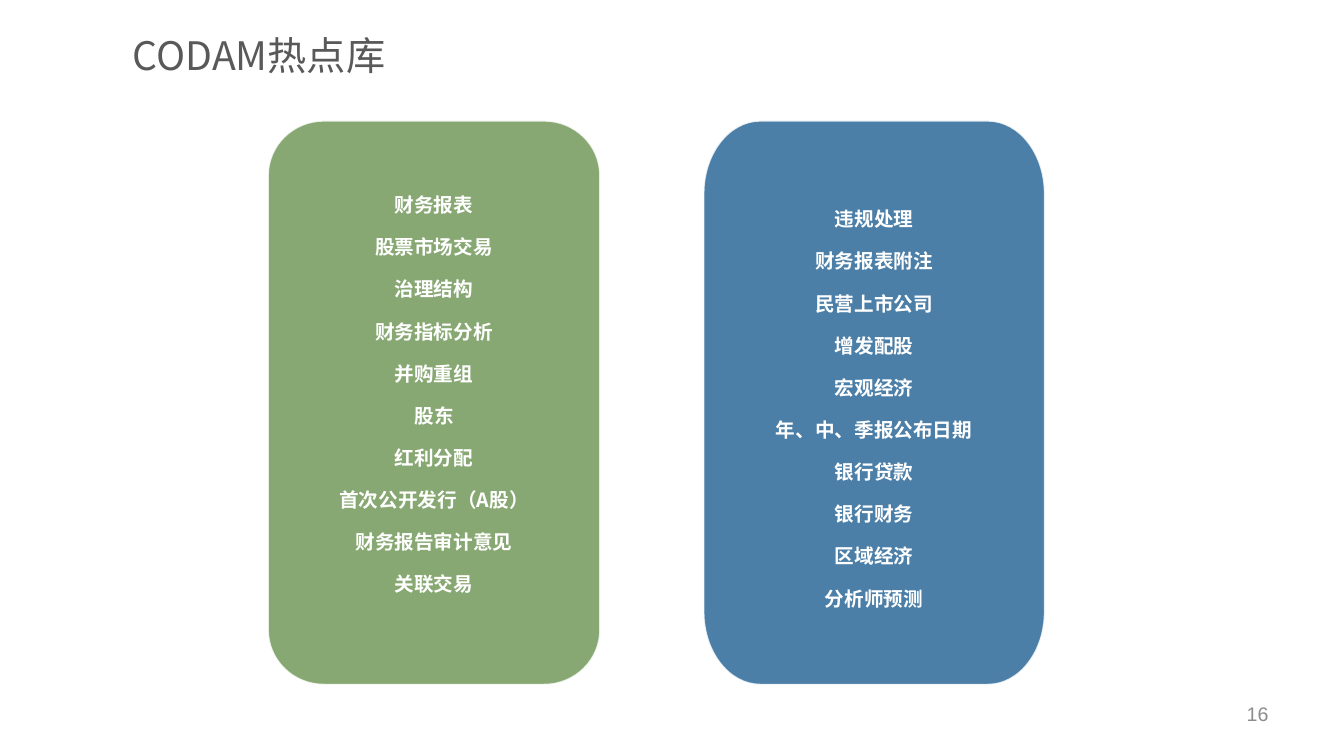
"""Build a slide listing popular financial databases in two rounded panels."""
from lxml import etree
from pptx import Presentation
from pptx.dml.color import RGBColor
from pptx.enum.text import MSO_ANCHOR, PP_ALIGN
from pptx.oxml.ns import qn
from pptx.util import Inches, Pt

LEFT, CENTER, RIGHT = PP_ALIGN.LEFT, PP_ALIGN.CENTER, PP_ALIGN.RIGHT
TOP, MIDDLE = MSO_ANCHOR.TOP, MSO_ANCHOR.MIDDLE

THEME = {
    "cjk": "Noto Sans CJK SC", "latin": "Arial",
    "title_size": 28, "body_size": 14,
    "title": "595959", "number": "8C8C8C", "white": "FFFFFF",
    "green": "548235", "blue": "004982",
}


def write_text(shape, lines, font, size, color, bold, anchor, insets, paragraph_format):
    """Fill a shape with one formatted paragraph per line."""
    frame = shape.text_frame
    frame.word_wrap = True
    frame.vertical_anchor = anchor
    for side, inset in zip(("left", "top", "right", "bottom"), insets):
        setattr(frame, f"margin_{side}", Inches(inset))
    for index, line in enumerate(lines):
        paragraph = frame.paragraphs[0] if index == 0 else frame.add_paragraph()
        for name, value in paragraph_format.items():
            setattr(paragraph, name, value)
        run = paragraph.add_run()
        run.text = line
        run.font.name = font
        run.font.size = Pt(size)
        run.font.bold = bold
        run.font.color.rgb = RGBColor.from_string(color)
        east_asian = etree.SubElement(run.font._element, qn("a:ea"))
        east_asian.set("typeface", font)


def set_opacity(fill_parent, percent):
    """Make the solid colour inside an element partly transparent."""
    color = fill_parent.find(qn("a:solidFill")).find(qn("a:srgbClr"))
    etree.SubElement(color, qn("a:alpha")).set("val", str(percent * 1000))


presentation = Presentation()
presentation.slide_width, presentation.slide_height = Inches(13.33), Inches(7.5)
slide = presentation.slides.add_slide(presentation.slide_layouts[6])

PANEL_TOP, PANEL_HEIGHT, CURVE = 1.2, 5.59, 0.55
DIRECTIONS = [(1, 0), (0, 1), (-1, 0), (0, -1)]
panels = [
    {"left": 2.66, "width": 3.29, "radius": (0.55, 0.54), "color": THEME["green"],
     "opacity": 69, "bottom_inset": 0.44,
     "lines": ["财务报表", "股票市场交易", "治理结构", "财务指标分析", "并购重组", "股东",
               "红利分配", "首次公开发行（A股）", "财务报告审计意见", "关联交易"]},
    {"left": 6.98, "width": 3.38, "radius": (0.56, 0.72), "color": THEME["blue"],
     "opacity": 70, "bottom_inset": 0.16,
     "lines": ["违规处理", "财务报表附注", "民营上市公司", "增发配股", "宏观经济",
               "年、中、季报公布日期", "银行贷款", "银行财务", "区域经济", "分析师预测"]},
]

for panel in panels:
    radius_x, radius_y = panel["radius"]
    near_x, far_x = panel["left"] + radius_x, panel["left"] + panel["width"] - radius_x
    near_y, far_y = PANEL_TOP + radius_y, PANEL_TOP + PANEL_HEIGHT - radius_y
    corners = [(far_x, far_y), (near_x, far_y), (near_x, near_y), (far_x, near_y)]
    outline = []
    for index, (center_x, center_y) in enumerate(corners):
        start_x, start_y = DIRECTIONS[index]
        end_x, end_y = DIRECTIONS[(index + 1) % 4]
        for start_share, end_share in ((1, 0), (1, CURVE), (CURVE, 1), (0, 1)):
            offset_x = radius_x * (start_share * start_x + end_share * end_x)
            offset_y = radius_y * (start_share * start_y + end_share * end_y)
            outline.append((Inches(center_x + offset_x), Inches(center_y + offset_y)))
    builder = slide.shapes.build_freeform(*outline[0])
    builder.add_line_segments(outline[1:], close=True)
    shape = builder.convert_to_shape()
    segments = list(shape._element.spPr.iter(qn("a:lnTo")))
    for first in range(0, len(outline), 4):
        corner = segments[first:first + 3]
        curve = etree.Element(qn("a:cubicBezTo"))
        corner[0].addprevious(curve)
        for segment in corner:
            curve.append(segment[0])
            segment.getparent().remove(segment)
    shape.shadow.inherit = False
    shape.fill.solid()
    shape.fill.fore_color.rgb = RGBColor.from_string(panel["color"])
    set_opacity(shape._element.spPr, panel["opacity"])
    shape.line.color.rgb = RGBColor.from_string(THEME["white"])
    shape.line.width = Pt(1)
    set_opacity(shape.line._ln, 80)
    write_text(shape, panel["lines"], THEME["cjk"], THEME["body_size"], THEME["white"],
               True, MIDDLE, (0.27, 0.16, 0.27, panel["bottom_inset"]),
               {"alignment": CENTER, "line_spacing": 1.5, "space_after": Pt(4.9)})

labels = [
    ((1.22, 0.31, 7.24, 1), "CODAM热点库", THEME["cjk"], THEME["title_size"],
     THEME["title"], TOP, {"alignment": LEFT, "line_spacing": 0.9}),
    ((9.68, 6.88, 3, 0.4), "16", THEME["latin"], THEME["body_size"],
     THEME["number"], MIDDLE, {"alignment": RIGHT}),
]
for box, text, font, size, color, anchor, paragraph_format in labels:
    label = slide.shapes.add_textbox(*map(Inches, box))
    write_text(label, [text], font, size, color, False, anchor,
               (0.1, 0.05, 0.1, 0.05), paragraph_format)

presentation.save("out.pptx")
